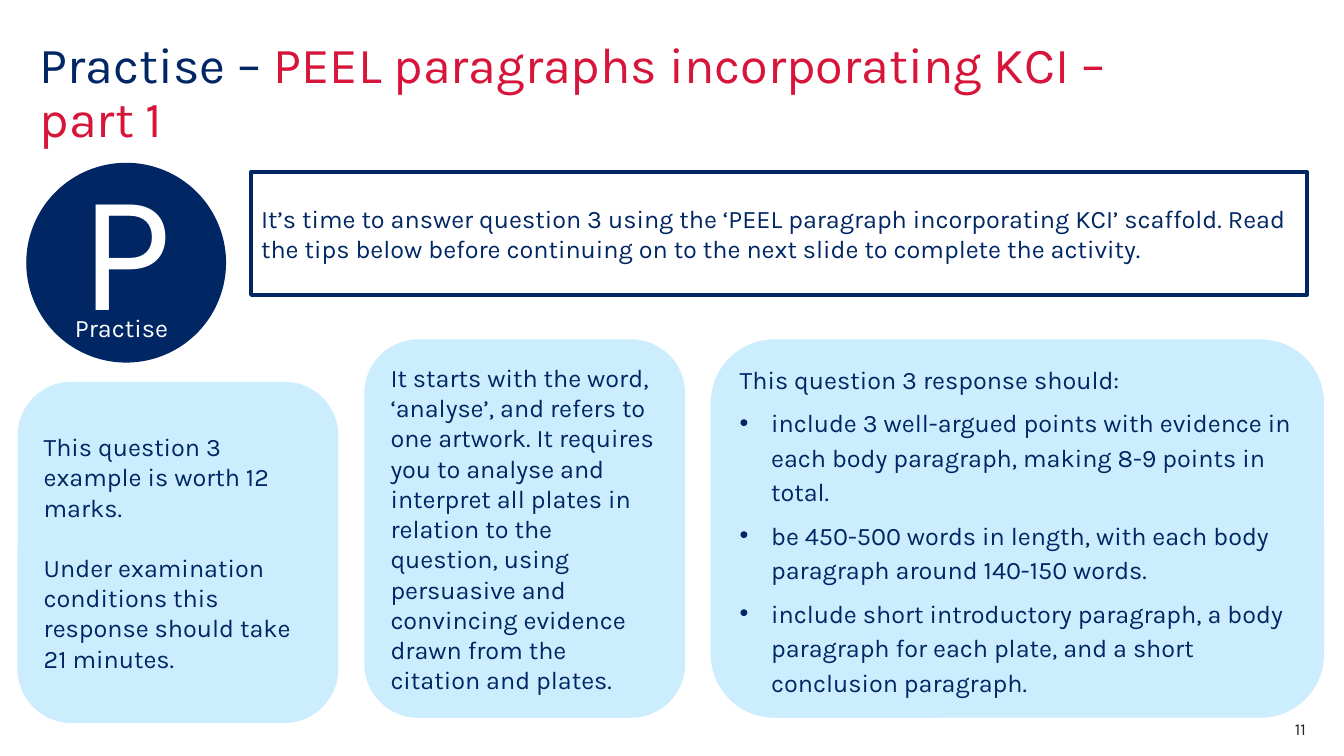
from lxml.etree import SubElement
from pptx import Presentation
from pptx.dml.color import RGBColor
from pptx.enum.shapes import MSO_SHAPE as Shape
from pptx.enum.text import MSO_ANCHOR as Anchor, PP_ALIGN as Align
from pptx.oxml.ns import qn
from pptx.util import Cm, Pt


def colour(hex_string):
    return RGBColor.from_string(hex_string)


class SlideBuilder:
    FONT = "Karla"
    NAVY, RED, WHITE = "002664", "D7153A", "FFFFFF"
    PALE, GREY = "CBEDFD", "22272B"

    def __init__(self, presentation):
        self.slide = presentation.slides.add_slide(presentation.slide_layouts[5])

    def format_runs(self, paragraph, size, hex_string):
        for run in paragraph.runs:
            run.font.name = self.FONT
            run.font.size = Pt(size)
            run.font.color.rgb = colour(hex_string)

    def set_insets(self, frame, inset):
        frame.margin_left = frame.margin_right = Cm(inset)
        frame.margin_top = frame.margin_bottom = Cm(inset)

    def title(self, box, parts):
        """Fill the title from (text, colour) parts."""
        title = self.slide.shapes.title
        title.left, title.top, title.width, title.height = map(Cm, box)
        frame = title.text_frame
        frame.word_wrap = True
        frame.vertical_anchor = Anchor.TOP
        self.set_insets(frame, 0)
        paragraph = frame.paragraphs[0]
        paragraph.alignment = Align.LEFT
        paragraph.line_spacing = 0.9
        for text, hex_string in parts:
            run = paragraph.add_run()
            run.text = text
            run.font.name = self.FONT
            run.font.size = Pt(36)
            run.font.color.rgb = colour(hex_string)

    def panel(self, kind, box, texts, fill=PALE, line=PALE, line_width=1,
              size=18, text_colour=NAVY, align=Align.LEFT, gap=0, spacing=None):
        """Draw a filled shape with one paragraph per text, gap points apart."""
        shape = self.slide.shapes.add_shape(kind, *map(Cm, box))
        shape.shadow.inherit = False
        shape.fill.solid()
        shape.fill.fore_color.rgb = colour(fill)
        shape.line.color.rgb = colour(line)
        shape.line.width = Pt(line_width)
        frame = shape.text_frame
        frame.word_wrap = True
        frame.vertical_anchor = Anchor.MIDDLE
        frame.text = "\n".join(texts)
        for index, paragraph in enumerate(frame.paragraphs):
            paragraph.alignment = align
            paragraph.line_spacing = spacing
            if index:
                paragraph.space_before = Pt(gap)
            self.format_runs(paragraph, size, text_colour)
        return shape

    def label(self, box, text, size, hex_string, align=Align.LEFT):
        text_box = self.slide.shapes.add_textbox(*map(Cm, box))
        frame = text_box.text_frame
        frame.word_wrap = True
        self.set_insets(frame, 0)
        frame.text = text
        frame.paragraphs[0].alignment = align
        self.format_runs(frame.paragraphs[0], size, hex_string)

    def bullet(self, paragraph, indent=0.79):
        properties = paragraph._p.get_or_add_pPr()
        properties.set("marL", str(Cm(indent)))
        properties.set("indent", str(-Cm(indent)))
        SubElement(properties, qn("a:buFont"), typeface="Arial")
        SubElement(properties, qn("a:buChar"), char="•")


def main():
    presentation = Presentation()
    presentation.slide_width, presentation.slide_height = Cm(33.87), Cm(19.05)
    builder = SlideBuilder(presentation)
    navy, white = builder.NAVY, builder.WHITE

    builder.title((1, 1, 28, 2.8), [
        ("Practise – ", navy),
        ("PEEL paragraphs incorporating KCI – part 1", builder.RED),
    ])

    badge = builder.panel(Shape.OVAL, (0.68, 4.12, 5, 5), ["P"], fill=navy, line=navy,
                          size=120, text_colour=white, align=Align.CENTER)
    badge.text_frame.margin_bottom = Cm(1.12)
    builder.label((1.89, 7.86, 2.62, 1.22), "Practise", 18, white)

    builder.panel(Shape.RECTANGLE, (6.33, 4.33, 26.6, 3.1), [
        "It’s time to answer question 3 using the ‘PEEL paragraph incorporating KCI’ "
        "scaffold. Read the tips below before continuing on to the next slide to "
        "complete the activity.",
    ], fill=white, line=navy, line_width=3)

    builder.panel(Shape.ROUNDED_RECTANGLE, (0.46, 9.64, 8.05, 8.56), [
        "This question 3 example is worth 12 marks.",
        "Under examination conditions this response should take 21 minutes.",
    ], gap=21.5)

    tips_top, tips_height = 8.57, 9.5
    builder.panel(Shape.ROUNDED_RECTANGLE, (9.2, tips_top, 8.05, tips_height), [
        "It starts with the word, ‘analyse’, and refers to one artwork. It requires you "
        "to analyse and interpret all plates in relation to the question, using "
        "persuasive and convincing evidence drawn from the citation and plates.",
    ])

    checklist = builder.panel(Shape.ROUNDED_RECTANGLE, (17.93, tips_top, 15.42, tips_height), [
        "This question 3 response should:",
        "include 3 well-argued points with evidence in each body paragraph, "
        "making 8-9 points in total.",
        "be 450-500 words in length, with each body paragraph around 140-150 words.",
        "include short introductory paragraph, a body paragraph for each plate, "
        "and a short conclusion paragraph.",
    ], gap=6, spacing=1.15)
    for paragraph in checklist.text_frame.paragraphs[1:]:
        builder.bullet(paragraph)

    builder.label((30.91, 18.11, 2, 0.5), "11", 12, builder.GREY, Align.RIGHT)

    presentation.save("out.pptx")


if __name__ == "__main__":
    main()
